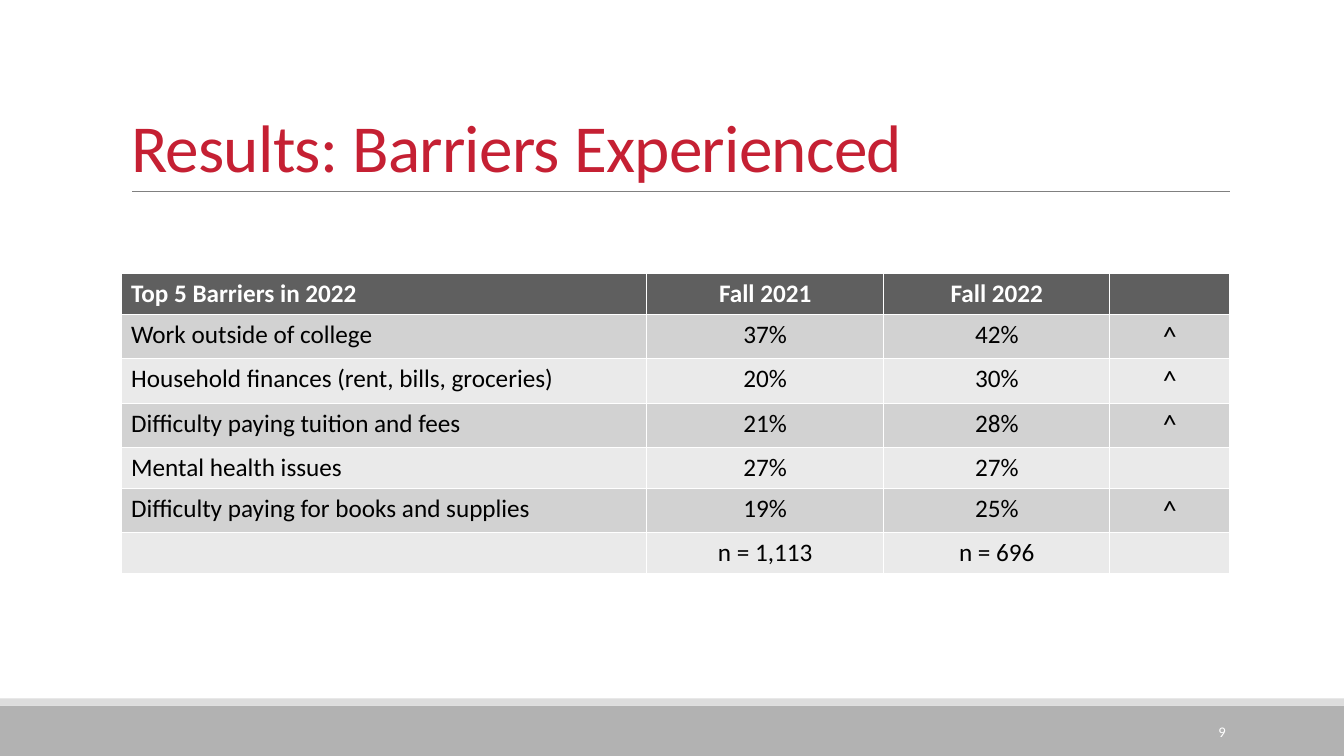
"""Build the slide that compares the top five barriers in 2021 and 2022."""
from pptx import Presentation
from pptx.dml.color import RGBColor
from pptx.enum.shapes import MSO_CONNECTOR, MSO_SHAPE
from pptx.enum.text import MSO_ANCHOR, MSO_AUTO_SIZE, PP_ALIGN
from pptx.oxml.ns import qn
from pptx.util import Cm, Pt
from lxml import etree

RECTANGLE = MSO_SHAPE.RECTANGLE
STRAIGHT = MSO_CONNECTOR.STRAIGHT
LEFT, CENTER, RIGHT = PP_ALIGN.LEFT, PP_ALIGN.CENTER, PP_ALIGN.RIGHT
TOP, MIDDLE, BOTTOM = MSO_ANCHOR.TOP, MSO_ANCHOR.MIDDLE, MSO_ANCHOR.BOTTOM
NO_AUTOFIT = MSO_AUTO_SIZE.NONE

COLORS = {
    "title": "C52033",
    "rule": "808080",
    "footer": "B2B2B2",
    "footer edge": "DDDDDD",
    "header": "5F5F5F",
    "dark band": "D2D2D2",
    "light band": "EAEAEA",
    "white": "FFFFFF",
    "black": "000000",
}
FONT = "Calibri"


def color(name):
    return RGBColor.from_string(COLORS[name])


def add_text(paragraph, text, size, color_name, alignment=LEFT, bold=False):
    paragraph.alignment = alignment
    run = paragraph.add_run()
    run.text = text
    run.font.name = FONT
    run.font.size = Pt(size)
    run.font.bold = bold
    run.font.color.rgb = color(color_name)
    return run


presentation = Presentation()
presentation.slide_width = Cm(33.87)
presentation.slide_height = Cm(19.05)
slide = presentation.slides.add_slide(presentation.slide_layouts[5])

for name, top, height in (("footer", 17.78, 1.27), ("footer edge", 17.6, 0.18)):
    bar = slide.shapes.add_shape(RECTANGLE, Cm(0), Cm(top), Cm(33.87), Cm(height))
    bar.shadow.inherit = False
    bar.fill.solid()
    bar.fill.fore_color.rgb = color(name)
    bar.line.fill.background()

title_rule = slide.shapes.add_connector(STRAIGHT, Cm(3.33), Cm(4.83), Cm(31), Cm(4.83))
title_rule.line.color.rgb = color("rule")
title_rule.line.width = Pt(0.5)
etree.SubElement(title_rule._element.spPr, qn("a:effectLst"))

title = slide.shapes.title
title.left, title.top, title.width, title.height = Cm(3.05), Cm(0.79), Cm(27.94), Cm(4.04)
title.text_frame.auto_size = NO_AUTOFIT
title.text_frame.word_wrap = True
title.text_frame.vertical_anchor = BOTTOM
title_paragraph = title.text_frame.paragraphs[0]
title_paragraph.line_spacing = 0.85
title_run = add_text(title_paragraph, "Results: Barriers Experienced", 48, "title")
title_run.font._element.set("spc", "-50")

barrier_rows = [
    ("Top 5 Barriers in 2022", "Fall 2021", "Fall 2022", ""),
    ("Work outside of college", "37%", "42%", "^"),
    ("Household finances (rent, bills, groceries)", "20%", "30%", "^"),
    ("Difficulty paying tuition and fees", "21%", "28%", "^"),
    ("Mental health issues", "27%", "27%", ""),
    ("Difficulty paying for books and supplies", "19%", "25%", "^"),
    ("", "n = 1,113", "n = 696", ""),
]
column_widths = [13.25, 5.97, 5.7, 3.02]
row_height = 1.03
table = slide.shapes.add_table(
    len(barrier_rows), len(column_widths), Cm(3.05), Cm(6.89),
    Cm(sum(column_widths)), Cm(row_height * len(barrier_rows)),
).table
for column, width in zip(table.columns, column_widths):
    column.width = Cm(width)

for row_index, values in enumerate(barrier_rows):
    is_header = row_index == 0
    band = "header" if is_header else "dark band" if row_index % 2 else "light band"
    table.rows[row_index].height = Cm(row_height)
    for column_index, value in enumerate(values):
        cell = table.cell(row_index, column_index)
        cell.fill.solid()
        cell.fill.fore_color.rgb = color(band)
        is_marker = value == "^"
        cell.vertical_anchor = MIDDLE if is_marker else TOP
        if value:
            add_text(
                cell.text_frame.paragraphs[0], value, 20 if is_marker else 18,
                "white" if is_header else "black",
                CENTER if column_index else LEFT, is_header,
            )

page_number = slide.shapes.add_textbox(Cm(27.51), Cm(17.93), Cm(3.63), Cm(1.02))
page_number.text_frame.word_wrap = True
page_number.text_frame.vertical_anchor = MIDDLE
add_text(page_number.text_frame.paragraphs[0], "9", 10.5, "white", RIGHT)

presentation.save("out.pptx")
